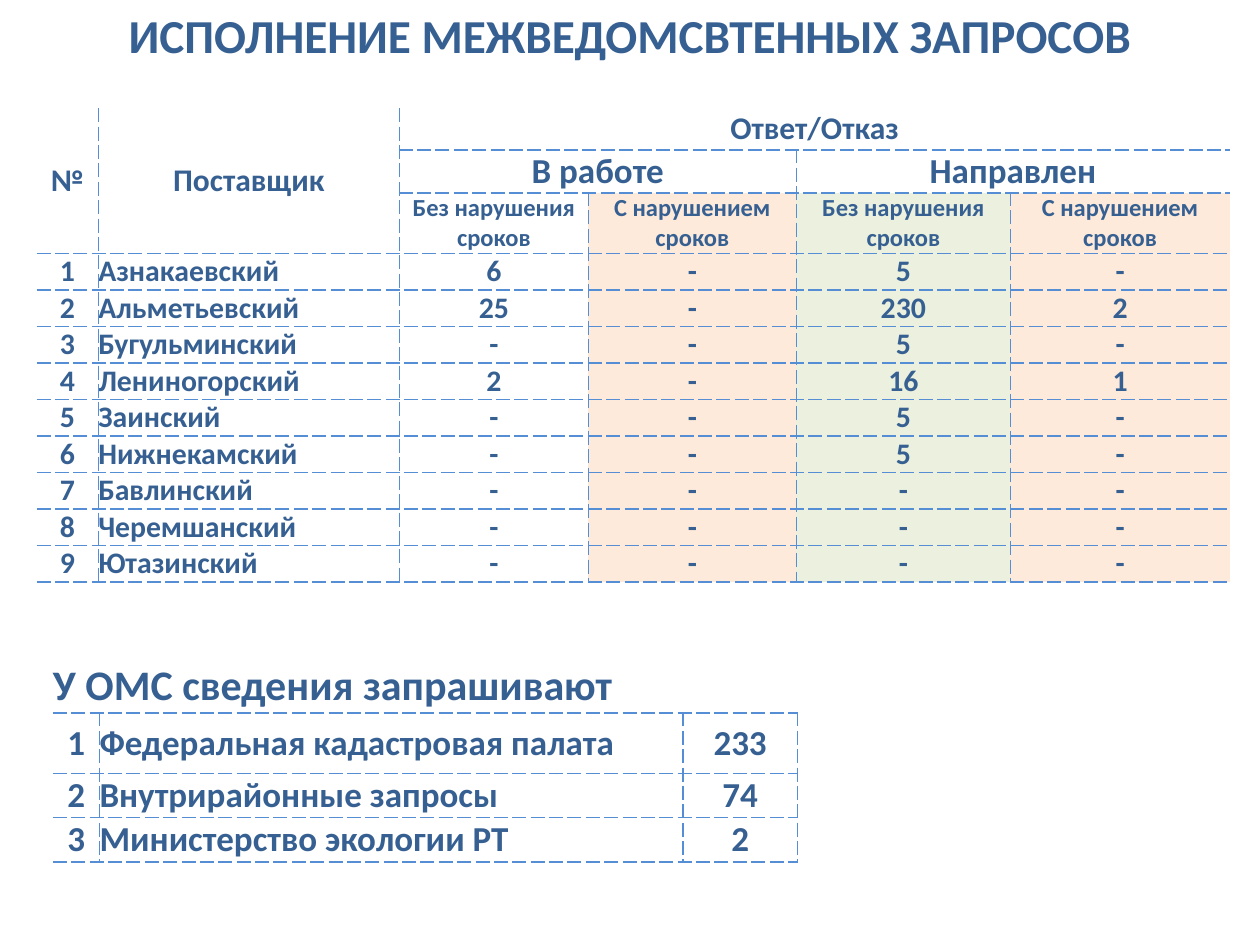
from dataclasses import dataclass, field

from lxml.etree import SubElement
from pptx import Presentation
from pptx.dml.color import RGBColor
from pptx.enum.text import MSO_ANCHOR as Anchor, PP_ALIGN as Align
from pptx.oxml.ns import qn
from pptx.util import Inches, Pt

FONT = "Calibri"
INK, LINE = "376092", "558ED5"
PEACH, GREEN = "FDEADA", "EBF1DE"
NO_STYLE = "{2D5ABB26-0587-4C30-8999-92F81FD0307C}"


@dataclass
class TableSpec:
    left: float
    top: float
    cols: list[float]
    heights: list[float]
    rows: list[list[str]]
    sizes: list[int]                       # text size of each row
    spans: list[tuple[int, int, int, int]]  # first row, first column, last row, last column
    left_from: dict[int, int]              # column -> first row set flush left
    fills: dict[int, str] = field(default_factory=dict)
    fill_from: int = 0
    closed_right_from: int | None = None   # first row with a line on the right edge


def rgb(color: str) -> RGBColor:
    return RGBColor.from_string(color)


def add_text(tf, text: str, size: int, align: Align) -> None:
    p = tf.paragraphs[0]
    p.alignment = align
    r = p.add_run()
    r.text = text
    r.font.name, r.font.size, r.font.bold = FONT, Pt(size), True
    r.font.color.rgb = rgb(INK)


def set_borders(cell, shown: dict[str, bool]) -> None:
    pr = cell._tc.get_or_add_tcPr()
    for i, (side, visible) in enumerate(shown.items()):
        ln = SubElement(pr, qn(f"a:ln{side}"), w=str(Pt(1)))
        pr.insert(i, ln)
        if visible:
            solid = SubElement(ln, qn("a:solidFill"))
            SubElement(solid, qn("a:srgbClr"), val=LINE)
            SubElement(ln, qn("a:prstDash"), val="sysDash")
        else:
            SubElement(ln, qn("a:noFill"))


def draw_table(slide, spec: TableSpec) -> None:
    n_rows, n_cols = len(spec.rows), len(spec.cols)
    frame = slide.shapes.add_table(
        n_rows, n_cols, Inches(spec.left), Inches(spec.top),
        Inches(sum(spec.cols)), Inches(sum(spec.heights)))
    table = frame.table
    table.first_row = table.horz_banding = False
    table._tbl.tblPr.find(qn("a:tableStyleId")).text = NO_STYLE
    for column, width in zip(table.columns, spec.cols):
        column.width = Inches(width)
    for row, height in zip(table.rows, spec.heights):
        row.height = Inches(height)
    for r0, c0, r1, c1 in spec.spans:
        table.cell(r0, c0).merge(table.cell(r1, c1))

    for r, texts in enumerate(spec.rows):
        for c, text in enumerate(texts):
            cell = table.cell(r, c)
            cell.margin_left = cell.margin_right = 0
            cell.margin_top = cell.margin_bottom = 0
            cell.vertical_anchor = Anchor.MIDDLE
            if text:
                flush = c in spec.left_from and r >= spec.left_from[c]
                add_text(cell.text_frame, text, spec.sizes[r],
                         Align.LEFT if flush else Align.CENTER)
            if c in spec.fills and r >= spec.fill_from:
                cell.fill.solid()
                cell.fill.fore_color.rgb = rgb(spec.fills[c])
            else:
                cell.fill.background()
            # Lines run along the edges of a merged area, never inside it
            r0, c0, r1, c1 = next(
                (s for s in spec.spans if s[0] <= r <= s[2] and s[1] <= c <= s[3]),
                (r, c, r, c))
            origin = (r, c) == (r0, c0)
            closed = spec.closed_right_from is not None and r >= spec.closed_right_from
            set_borders(cell, {
                "L": c == c0 > 0,
                "R": (origin or c == c1) and (c1 < n_cols - 1 or closed),
                "T": r == r0 > 0,
                "B": origin or r == r1,
            })


# Answers by supplier: name, in progress (on time, late), sent (on time, late)
SUPPLIERS = [
    ("Азнакаевский", "6", "-", "5", "-"),
    ("Альметьевский", "25", "-", "230", "2"),
    ("Бугульминский", "-", "-", "5", "-"),
    ("Лениногорский", "2", "-", "16", "1"),
    ("Заинский", "-", "-", "5", "-"),
    ("Нижнекамский", "-", "-", "5", "-"),
    ("Бавлинский", "-", "-", "-", "-"),
    ("Черемшанский", "-", "-", "-", "-"),
    ("Ютазинский", "-", "-", "-", "-"),
]
REQUESTERS = [
    ("Федеральная кадастровая палата", "233"),
    ("Внутрирайонные запросы", "74"),
    ("Министерство экологии РТ", "2"),
]


def numbered(records: list[tuple[str, ...]]) -> list[list[str]]:
    return [[str(i), *record] for i, record in enumerate(records, 1)]


ANSWERS = TableSpec(
    left=0.29, top=0.86,
    cols=[0.49, 2.39, 1.5, 1.65, 1.7, 1.74],
    heights=[0.33, 0.34, 0.48] + [0.29] * len(SUPPLIERS),
    rows=[
        ["№", "Поставщик", "Ответ/Отказ", "", "", ""],
        ["", "", "В работе", "", "Направлен", ""],
        ["", ""] + ["Без нарушения сроков", "С нарушением сроков"] * 2,
        *numbered(SUPPLIERS),
    ],
    sizes=[18, 20, 14] + [17] * len(SUPPLIERS),
    spans=[(0, 0, 2, 0), (0, 1, 2, 1), (0, 2, 0, 5), (1, 2, 1, 3), (1, 4, 1, 5)],
    left_from={1: 3},
    fills={3: PEACH, 4: GREEN, 5: PEACH}, fill_from=2,
)
REQUESTS = TableSpec(
    left=0.42, top=5.24,
    cols=[0.37, 4.63, 0.91],
    heights=[0.42, 0.48, 0.35, 0.35],
    rows=[["У ОМС сведения запрашивают", "", ""], *numbered(REQUESTERS)],
    sizes=[24] + [20] * len(REQUESTERS),
    spans=[(0, 0, 0, 2)],
    left_from={0: 0, 1: 1},
    closed_right_from=1,
)
# The heading is flush left, the numbers below it are centred
REQUESTS.left_from = {1: 1}


def main() -> None:
    prs = Presentation()
    prs.slide_width, prs.slide_height = Inches(10), Inches(7.5)
    slide = prs.slides.add_slide(prs.slide_layouts[5])

    # Tables
    for spec in (ANSWERS, REQUESTS):
        draw_table(slide, spec)
    heading = slide.shapes[-1].table.cell(0, 0)
    heading.text_frame.paragraphs[0].alignment = Align.LEFT

    # Title
    title = slide.shapes.title
    title.left, title.top = Inches(0), Inches(0)
    title.width, title.height = Inches(10), Inches(0.56)
    title.text_frame.vertical_anchor = Anchor.TOP
    add_text(title.text_frame, "ИСПОЛНЕНИЕ МЕЖВЕДОМСВТЕННЫХ ЗАПРОСОВ", 27, Align.CENTER)

    prs.save("out.pptx")


if __name__ == "__main__":
    main()
